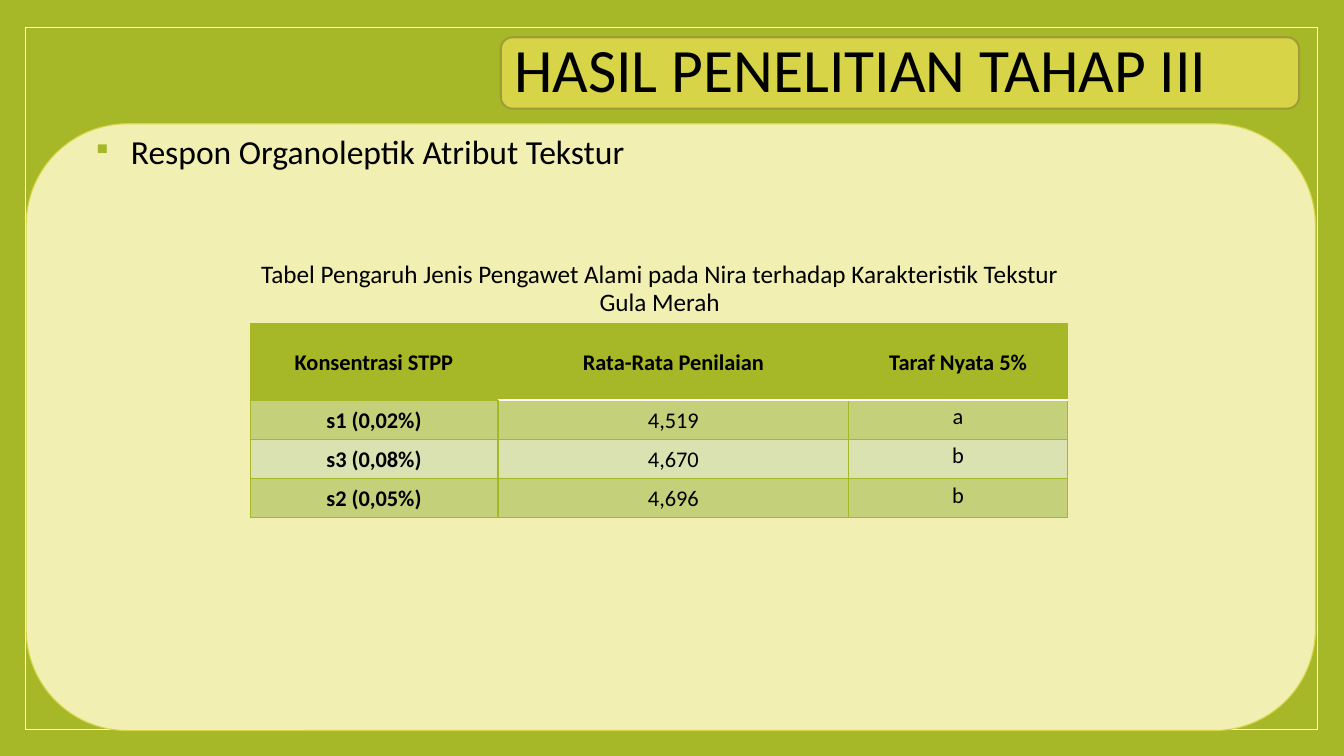
from dataclasses import dataclass

from lxml import etree
from pptx import Presentation
from pptx.dml.color import RGBColor
from pptx.enum.shapes import MSO_SHAPE
from pptx.enum.text import MSO_ANCHOR, PP_ALIGN
from pptx.oxml.ns import qn
from pptx.util import Cm, Pt

RECTANGLE, ROUNDED = MSO_SHAPE.RECTANGLE, MSO_SHAPE.ROUNDED_RECTANGLE
TOP, MIDDLE = MSO_ANCHOR.TOP, MSO_ANCHOR.MIDDLE
LEFT, CENTER, JUSTIFY = PP_ALIGN.LEFT, PP_ALIGN.CENTER, PP_ALIGN.JUSTIFY

TITLE = "HASIL PENELITIAN TAHAP III"
TOPIC = "Respon Organoleptik Atribut Tekstur"
CAPTION = ("Tabel Pengaruh Jenis Pengawet Alami pada Nira terhadap "
           "Karakteristik Tekstur Gula Merah")
ROWS = [
    ("Konsentrasi STPP", "Rata-Rata Penilaian", "Taraf Nyata 5%"),
    ("s1 (0,02%)", "4,519", "a"),
    ("s3 (0,08%)", "4,670", "b"),
    ("s2 (0,05%)", "4,696", "b"),
]

# Boxes in centimetres: left, top, width, height
FRAME_BOX = (0.64, 0.69, 32.56, 17.7)
PANEL_BOX = (0.66, 3.12, 32.49, 15.29)
TITLE_BOX = (12.62, 0.94, 20.12, 1.8)
TOPIC_BOX = (2.08, 3.3, 14.45, 1.04)
CAPTION_BOX = (5.87, 6.48, 21.51, 1.47)
TABLE_LEFT, TABLE_TOP = 6.3, 8.15
COLUMN_WIDTHS = (6.25, 8.84, 5.51)
HEADER_HEIGHT, BODY_HEIGHT = 1.93, 0.99
BULLET_INDENT = 0.97


@dataclass(frozen=True)
class Theme:
    font: str = "Calibri"
    text: str = "000000"
    green: str = "A6B727"
    white: str = "FFFFFF"
    panel: str = "F1F0B2"
    yellow: str = "D7D447"
    olive: str = "9F9D35"
    dark_band: str = "C4D07A"
    light_band: str = "DAE2B2"
    title_size: int = 44
    topic_size: int = 24
    caption_size: int = 18
    table_size: int = 16
    thin: float = 0.79
    thick: float = 1.5


THEME = Theme()


def color(value):
    return RGBColor.from_string(value)


def add_panel(page, preset, box, fill, line, width):
    shape = page.shapes.add_shape(preset, *map(Cm, box))
    shape.shadow.inherit = False
    shape.fill.solid()
    shape.fill.fore_color.rgb = color(fill)
    shape.line.color.rgb = color(line)
    shape.line.width = Pt(width)
    return shape


def add_text_box(page, box):
    frame = page.shapes.add_textbox(*map(Cm, box)).text_frame
    frame.word_wrap = True
    return frame


def write(frame, text, size, align, spacing=0.9, bold=False):
    para = frame.paragraphs[0]
    para.alignment = align
    para.line_spacing = spacing
    span = para.add_run()
    span.text = text
    span.font.name = THEME.font
    span.font.size = Pt(size)
    span.font.bold = bold
    span.font.color.rgb = color(THEME.text)


def add_bullet(para):
    properties = para._p.get_or_add_pPr()
    indent = Cm(BULLET_INDENT)
    properties.set("marL", str(indent))
    properties.set("indent", str(-indent))
    bullet_color = etree.SubElement(properties, qn("a:buClr"))
    etree.SubElement(bullet_color, qn("a:srgbClr"), val=THEME.green)
    etree.SubElement(properties, qn("a:buSzPct"), val="80000")
    etree.SubElement(properties, qn("a:buChar"), char="▪")


def set_borders(cell, borders):
    """Put (side, colour, width) lines ahead of the cell's fill."""
    properties = cell._tc.get_or_add_tcPr()
    for position, (side, line_color, width) in enumerate(borders):
        line = etree.Element(qn(f"a:ln{side}"), w=str(Pt(width)))
        fill = etree.SubElement(line, qn("a:solidFill"))
        etree.SubElement(fill, qn("a:srgbClr"), val=line_color)
        properties.insert(position, line)


def cell_borders(row, column):
    green_thin = (THEME.green, THEME.thin)
    green_thick = (THEME.green, THEME.thick)
    header_rule = (THEME.white, THEME.thick)
    beside_labels = row > 0
    return [
        ("L", *(green_thick if beside_labels and column == 1 else green_thin)),
        ("R", *(green_thick if beside_labels and column == 0 else green_thin)),
        ("T", *(header_rule if row == 1 and column > 0 else green_thin)),
        ("B", *(header_rule if row == 0 and column > 0 else green_thin)),
    ]


def style_cell(cell, text, row, column):
    is_header, is_last = row == 0, column == len(COLUMN_WIDTHS) - 1
    side, edge = (0.03, 0.03) if is_last else (0.2, 0)
    cell.margin_left = cell.margin_right = Cm(side)
    cell.margin_top = cell.margin_bottom = Cm(edge)
    cell.vertical_anchor = TOP if is_last and not is_header else MIDDLE
    band = THEME.dark_band if row % 2 else THEME.light_band
    cell.fill.solid()
    cell.fill.fore_color.rgb = color(THEME.green if is_header else band)
    write(cell.text_frame, text, THEME.table_size, CENTER, 1.07,
          bold=is_header or column == 0)
    set_borders(cell, cell_borders(row, column))


def add_results_table(page):
    heights = [HEADER_HEIGHT] + [BODY_HEIGHT] * (len(ROWS) - 1)
    table = page.shapes.add_table(
        len(ROWS), len(COLUMN_WIDTHS), Cm(TABLE_LEFT), Cm(TABLE_TOP),
        Cm(sum(COLUMN_WIDTHS)), Cm(sum(heights))).table
    for column, width in zip(table.columns, COLUMN_WIDTHS):
        column.width = Cm(width)
    for row, height in zip(table.rows, heights):
        row.height = Cm(height)
    for row, texts in enumerate(ROWS):
        for column, text in enumerate(texts):
            style_cell(table.cell(row, column), text, row, column)


def main():
    deck = Presentation()
    deck.slide_width, deck.slide_height = Cm(33.87), Cm(19.05)
    page = deck.slides.add_slide(deck.slide_layouts[6])
    page.background.fill.solid()
    page.background.fill.fore_color.rgb = color(THEME.green)

    add_panel(page, RECTANGLE, FRAME_BOX, THEME.green, THEME.white, 1)
    add_panel(page, ROUNDED, PANEL_BOX, THEME.panel, THEME.yellow, THEME.thin)
    banner = add_panel(page, ROUNDED, TITLE_BOX, THEME.yellow, THEME.olive,
                       THEME.thick)
    banner.text_frame.word_wrap = True
    banner.text_frame.vertical_anchor = MIDDLE
    write(banner.text_frame, TITLE, THEME.title_size, JUSTIFY)

    topic = add_text_box(page, TOPIC_BOX)
    write(topic, TOPIC, THEME.topic_size, LEFT)
    add_bullet(topic.paragraphs[0])
    write(add_text_box(page, CAPTION_BOX), CAPTION, THEME.caption_size, CENTER)
    add_results_table(page)
    deck.save("out.pptx")


if __name__ == "__main__":
    main()
